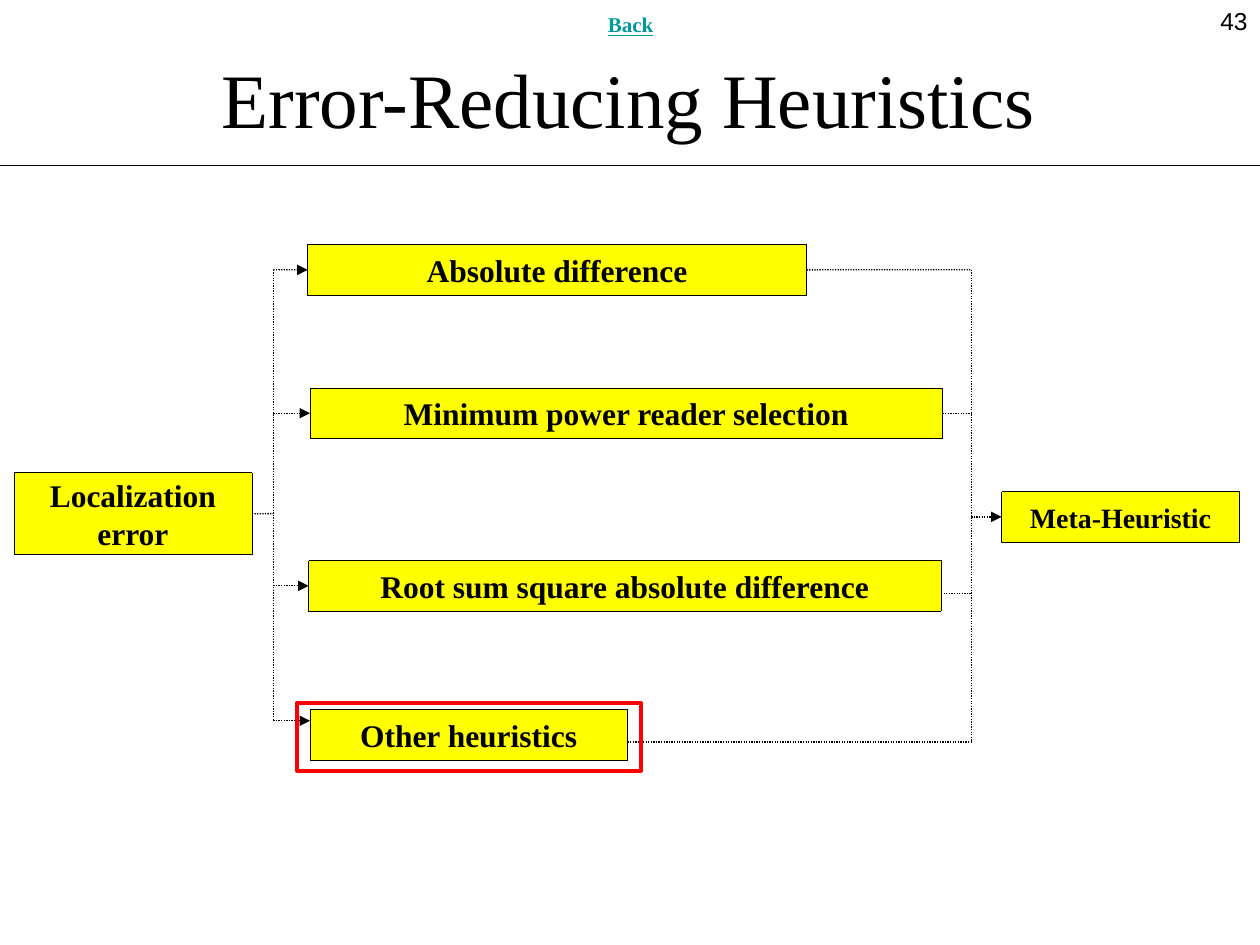
from lxml.etree import SubElement
from pptx import Presentation
from pptx.dml.color import RGBColor
from pptx.enum.dml import MSO_LINE as Dash
from pptx.enum.shapes import MSO_CONNECTOR as Conn, MSO_SHAPE as Shape
from pptx.enum.text import MSO_ANCHOR as Anchor, PP_ALIGN as Align
from pptx.oxml.ns import qn
from pptx.util import Cm, Pt

# Content: lengths in cm
TITLE = "Error-Reducing Heuristics"
SERIF = "Times New Roman"
BOX_H = 1.02
SOURCE = ("Localization error", 0.28, 9.53, 4.8, 1.65, 18)
TARGET = ("Meta-Heuristic", 20.19, 9.91, 4.8, BOX_H, 16)
# text, left, top, width, height of arrow in and line out (None = box middle)
HEURISTICS = [
    ("Absolute difference", 6.2, 4.93, 10.06, None, None),
    ("Minimum power reader selection", 6.25, 7.82, 12.75, None, None),
    ("Root sum square absolute difference", 6.22, 11.3, 12.75, None, 11.96),
    ("Other heuristics", 6.25, 14.3, 6.4, 14.53, 14.96),
]
LEFT_BUS, RIGHT_BUS = 5.51, 19.58
TOP, LEFT, RIGHT = 0, 1, 3


def color(value):
    return RGBColor.from_string(value)


def write(shape, text, size, font=SERIF, fill="000000", align=Align.CENTER,
          anchor=Anchor.MIDDLE, bold=False, underline=False):
    tf = shape.text_frame
    tf.word_wrap = True
    tf.vertical_anchor = anchor
    p = tf.paragraphs[0]
    p.alignment = align
    r = p.add_run()
    r.text = text
    r.font.name, r.font.size = font, Pt(size)
    r.font.bold, r.font.underline = bold, underline
    r.font.color.rgb = color(fill)


def add_rect(x, y, w, h, line, width, fill=None):
    sp = s.shapes.add_shape(Shape.RECTANGLE, Cm(x), Cm(y), Cm(w), Cm(h))
    sp.shadow.inherit = False
    if fill:
        sp.fill.solid()
        sp.fill.fore_color.rgb = color(fill)
    else:
        sp.fill.background()
    sp.line.color.rgb = color(line)
    sp.line.width = Pt(width)
    return sp


def add_box(text, x, y, w, h, size):
    sp = add_rect(x, y, w, h, "000000", 0.25, "FFFF00")
    sp.line.dash_style = Dash.ROUND_DOT
    write(sp, text, size, bold=True)
    return sp


def add_line(x1, y1, x2, y2, width=0.75, dotted=True, arrow=False):
    c = s.shapes.add_connector(Conn.STRAIGHT, Cm(x1), Cm(y1), Cm(x2), Cm(y2))
    c.line.color.rgb = color("000000")
    c.line.width = Pt(width)
    if dotted:
        c.line.dash_style = Dash.ROUND_DOT
    if arrow:
        SubElement(c.line._get_or_add_ln(), qn("a:tailEnd"), type="triangle")
    SubElement(c._element.spPr, qn("a:effectLst"))
    return c


prs = Presentation()
prs.slide_width, prs.slide_height = Cm(25.4), Cm(19.05)
s = prs.slides.add_slide(prs.slide_layouts[5])

# Title, rule and page number
title = s.shapes.title
title.left, title.top, title.width, title.height = Cm(1.24), Cm(0.61), Cm(22.86), Cm(2.72)
write(title, TITLE, 44)
add_line(0, 3.33, 25.4, 3.33, width=0.25, dotted=False)
number = s.shapes.add_textbox(Cm(23.5), 0, Cm(1.9), Cm(1.32))
write(number, "43", 14, font="Arial", align=Align.RIGHT, anchor=Anchor.TOP)

# Source and target boxes
source, target = add_box(*SOURCE), add_box(*TARGET)
source_y = SOURCE[2] + SOURCE[4] / 2
target_y = TARGET[2] + TARGET[4] / 2
add_line(SOURCE[1] + SOURCE[3], source_y, LEFT_BUS, source_y).begin_connect(source, RIGHT)
add_line(RIGHT_BUS, target_y, TARGET[1], target_y, arrow=True).end_connect(target, LEFT)

# Heuristic boxes, each with an arrow in and a line out
ins, outs = [], []
for text, x, y, w, in_y, out_y in HEURISTICS:
    box = add_box(text, x, y, w, BOX_H, 18)
    middle = y + BOX_H / 2
    ins.append(in_y or middle)
    outs.append(out_y or middle)
    arrow = add_line(LEFT_BUS, ins[-1], x, ins[-1], arrow=True)
    if in_y is None:
        arrow.end_connect(box, LEFT)
    line = add_line(x + w, outs[-1], RIGHT_BUS, outs[-1])
    if out_y is None:
        line.begin_connect(box, RIGHT)

# Vertical buses
for x, ys in ((LEFT_BUS, ins), (RIGHT_BUS, outs)):
    add_line(x, ys[0], x, ys[-1])

# Highlight and back label
add_rect(5.99, 14.17, 6.93, 1.37, "FF0000", 2.25)
back = s.shapes.add_textbox(Cm(10.11), 0, Cm(5.21), Cm(0.99))
write(back, "Back", 12, fill="009999", bold=True, underline=True)

prs.save("out.pptx")
